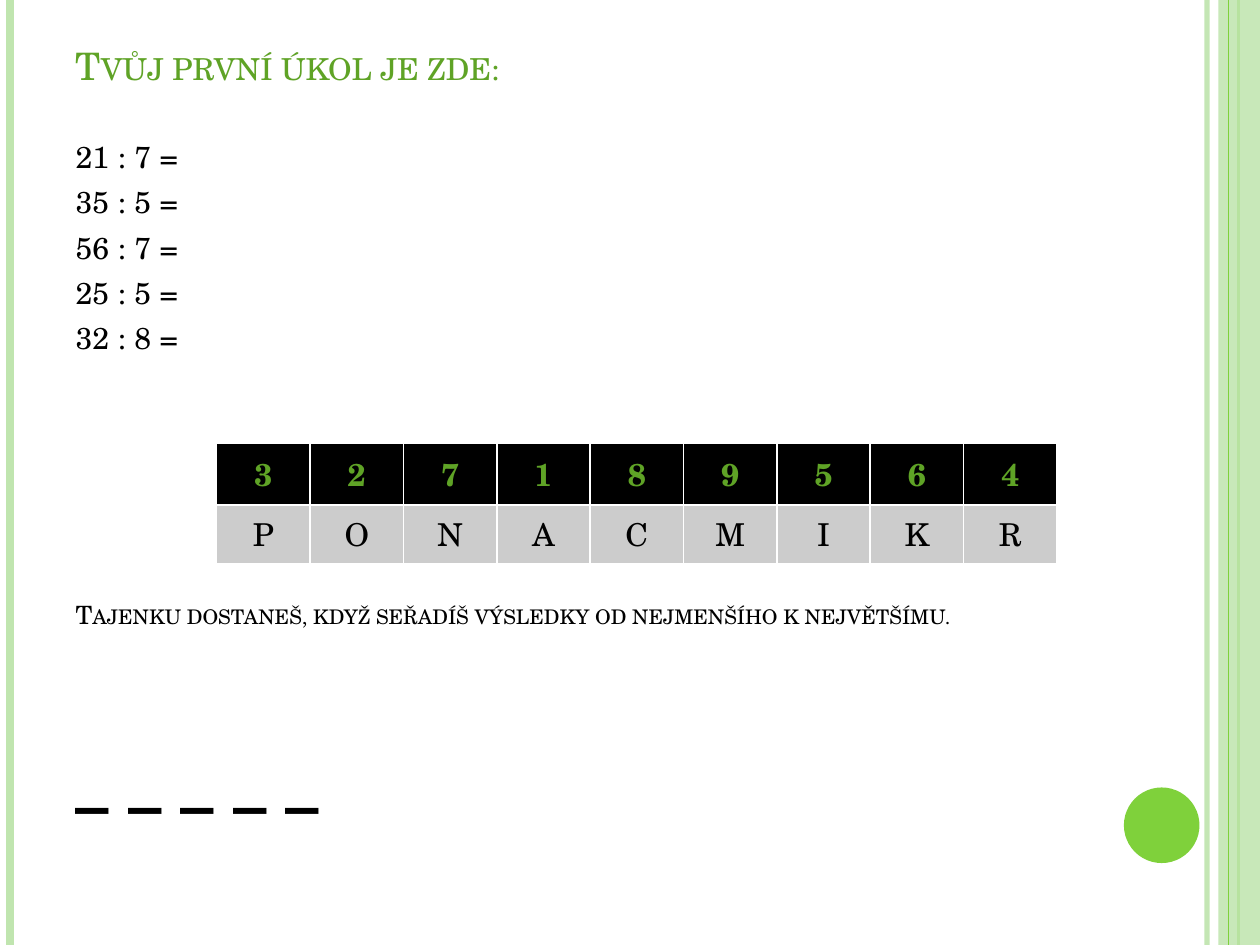
import pptx
import pptx.util
import pptx.dml.color
import pptx.enum.shapes
import pptx.enum.text
import lxml.etree

Inches, Pt = pptx.util.Inches, pptx.util.Pt
RGB = pptx.dml.color.RGBColor.from_string
SHAPES = pptx.enum.shapes.MSO_SHAPE
ALIGN = pptx.enum.text.PP_ALIGN
ANCHOR = pptx.enum.text.MSO_ANCHOR
NS = "{http://schemas.openxmlformats.org/drawingml/2006/main}"
FONT = "TeX Gyre Schola"
HEX = {"pale": "C0E5AF", "green": "7FD13B", "dark": "5FA326",
       "black": "000000", "grey": "CCCCCC"}


def fade(item, pct):
    """Set the opacity of the first colour in a shape, in percent."""
    color = next(item._element.spPr.iter(NS + "srgbClr"))
    lxml.etree.SubElement(color, NS + "alpha").set("val", str(pct * 1000))


def paint(shape, color):
    shape.fill.solid()
    shape.fill.fore_color.rgb = RGB(HEX[color])
    shape.line.fill.background()
    shape.shadow.inherit = False


deck = pptx.Presentation()
deck.slide_width, deck.slide_height = Inches(10), Inches(7.5)
slide = deck.slides.add_slide(deck.slide_layouts[5])
shapes = slide.shapes

# Side stripes, band and disc
stripes = [(9.58, "pale", 3), (0.08, "pale", 4.5),
           (9.83, "green", 1.5), (9.75, "green", 0.75)]
lines = []
for x, color, width in stripes:
    if x == 9.75:
        band = shapes.add_shape(SHAPES.RECTANGLE, Inches(9.67), 0,
                                Inches(0.33), Inches(7.5))
        paint(band, "pale")
        fade(band, 87)
    line = shapes.add_connector(pptx.enum.shapes.MSO_CONNECTOR.STRAIGHT,
                                Inches(x), 0, Inches(x), Inches(7.5))
    line.line.color.rgb = RGB(HEX[color])
    line.line.width = Pt(width)
    lxml.etree.SubElement(line._element.spPr, NS + "effectLst")
    lines.append(line)
fade(lines[0], 93)

disc = shapes.add_shape(SHAPES.OVAL, Inches(8.92), Inches(6.25),
                        Inches(0.6), Inches(0.6))
paint(disc, "green")

# Task text: wording, size, line height, space before, colour
sums = ["21 : 7 =", "35 : 5 =", "56 : 7 =", "25 : 5 =", "32 : 8 ="]
rows = [("Tvůj první úkol je zde:", 21.6, 25.9, 0, "dark")]
rows += [(task, 21.6, 25.9, 0 if i else 24.2, "black")
         for i, task in enumerate(sums)]
rows += [("Tajenku dostaneš, když seřadíš výsledky od nejmenšího k největšímu.",
          14.4, 17.3, 138.4, "black"),
         ("_ _ _ _ _", 47.7, 57.2, 52.4, "black")]

title = shapes.title
title.left, title.top = Inches(0.5), Inches(0.29)
title.width, title.height = Inches(8.17), Inches(7.21)
frame = title.text_frame
frame.auto_size = pptx.enum.text.MSO_AUTO_SIZE.NONE
frame.word_wrap = True
frame.vertical_anchor = ANCHOR.TOP
frame.text = "\n".join(row[0] for row in rows)
for para, (text, size, height, gap, color) in zip(frame.paragraphs, rows):
    para.alignment = ALIGN.LEFT
    para.line_spacing, para.space_before = Pt(height), Pt(gap)
    para.font.name, para.font.size = FONT, Pt(size)
    para.font.bold = size > 40
    para.font.color.rgb = RGB(HEX[color])
    para.runs[0].font._element.set("cap", "small")

# Key: the default table style gives the white borders
key = ["327189564", "PONACMIKR"]
table = shapes.add_table(2, 9, Inches(1.72), Inches(3.52),
                         Inches(6.67), Inches(0.82)).table
table.horz_banding = False
for r, (word, back, ink) in enumerate(zip(key, ["black", "grey"],
                                          ["dark", "black"])):
    table.rows[r].height = Inches(0.41)
    for c, sign in enumerate(word):
        cell = table.cell(r, c)
        cell.text = sign
        cell.fill.solid()
        cell.fill.fore_color.rgb = RGB(HEX[back])
        para = cell.text_frame.paragraphs[0]
        para.alignment = ALIGN.CENTER
        para.font.name, para.font.size = FONT, Pt(18)
        para.font.bold = r == 0
        para.font.color.rgb = RGB(HEX[ink])

deck.save("out.pptx")
